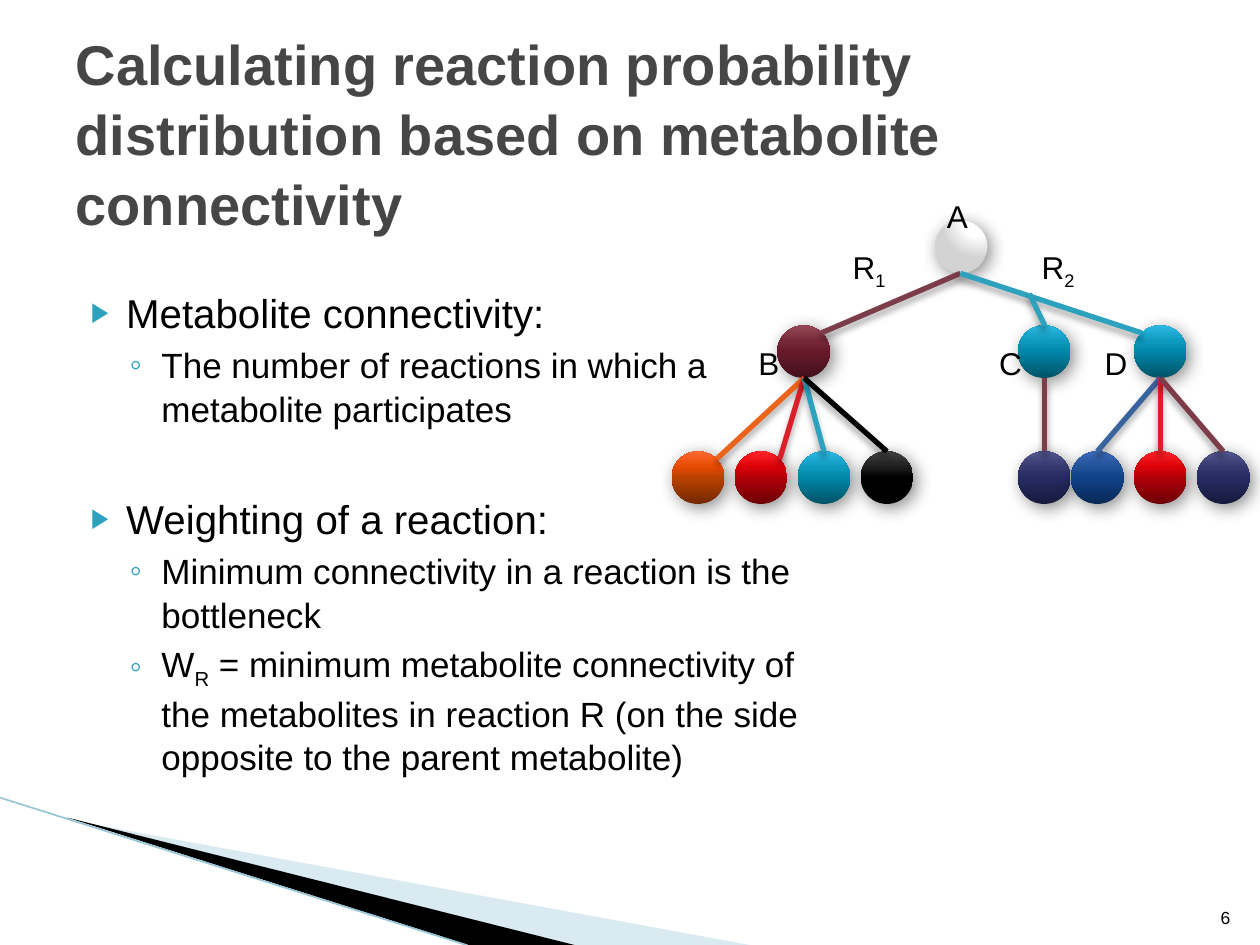
"""Build a slide on reaction probabilities derived from metabolite connectivity."""
import lxml.etree
import pptx
import pptx.dml.color
import pptx.enum.shapes
import pptx.enum.text
import pptx.oxml
import pptx.oxml.ns
import pptx.util

Cm = pptx.util.Cm
Pt = pptx.util.Pt
RGBColor = pptx.dml.color.RGBColor
qn = pptx.oxml.ns.qn
NAMESPACE = pptx.oxml.ns.nsdecls("a")

BLACK = RGBColor(0x00, 0x00, 0x00)
GREY = RGBColor(0x46, 0x46, 0x46)
TEAL = RGBColor(0x2D, 0xA2, 0xBF)
PALE_BLUE = RGBColor(0xA0, 0xCB, 0xDC)
EDGE_BLUE = RGBColor(0x97, 0xC5, 0xD8)
MAROON = RGBColor(0x7D, 0x3C, 0x4A)
ORANGE = RGBColor(0xEB, 0x64, 0x1B)
RED = RGBColor(0xDA, 0x1F, 0x28)
BLUE = RGBColor(0x39, 0x63, 0x9D)

LINEAR = '<a:lin ang="16200000" scaled="0"/>'
RADIAL = '<a:path path="circle"><a:fillToRect l="65000" b="98000"/></a:path>'
STOPS = (0, 50, 70, 100)
WHITE_BALL = ((0, 40, 100), ("FFFFFF", "FFFFFF", "D3D3D3"), RADIAL)
MAROON_BALL = (STOPS, ("420F1A", "681A2B", "772939", "944755"), LINEAR)
TEAL_BALL = (STOPS, ("005367", "0086A7", "0E9ABE", "2CB9E3"), LINEAR)
BLACK_BALL = (STOPS, ("000000", "000000", "1D1D1D", "424242"), LINEAR)
BLUE_BALL = (STOPS, ("072956", "104288", "205199", "3D6BB9"), LINEAR)
RED_BALL = (STOPS, ("6D0005", "B00008", "DA0008", "FF2429"), LINEAR)
NAVY_BALL = (STOPS, ("171A3D", "262B61", "353970", "51568D"), LINEAR)
ORANGE_BALL = (STOPS, ("732800", "B94100", "E64900", "FF6933"), LINEAR)


def add_line(start, end, color, width):
    line = slide.shapes.add_connector(
        pptx.enum.shapes.MSO_CONNECTOR.STRAIGHT,
        *(Cm(value) for value in start + end))
    line.line.color.rgb = color
    line.line.width = Pt(width)
    effects = lxml.etree.SubElement(line._element.spPr, qn("a:effectLst"))
    return effects


def add_shadow(effects, alpha, blur, direction):
    effects.append(pptx.oxml.parse_xml(
        f'<a:outerShdw {NAMESPACE} blurRad="{Pt(blur)}" dist="{Pt(3)}" '
        f'dir="{direction * 60000}" algn="ctr" rotWithShape="0">'
        f'<a:srgbClr val="000000"><a:alpha val="{alpha * 1000}"/></a:srgbClr>'
        '</a:outerShdw>'))


deck = pptx.Presentation()
deck.slide_width = Cm(25.4)
deck.slide_height = Cm(19.05)
slide = deck.slides.add_slide(deck.slide_layouts[1])

wedges = [
    ([(1.4, 16.53), (15.11, 19.05), (11.58, 19.05)], PALE_BLUE),
    ([(1.35, 16.48), (11.58, 19.05), (9.45, 19.05)], BLACK),
]
for points, color in wedges:
    corners = [(Cm(x), Cm(y)) for x, y in points]
    builder = slide.shapes.build_freeform(*corners[0])
    builder.add_line_segments(corners[1:])
    wedge = builder.convert_to_shape()
    wedge.shadow.inherit = False
    wedge.fill.solid()
    wedge.fill.fore_color.rgb = color
    wedge.line.fill.background()
    if color == PALE_BLUE:
        tint = wedge._element.spPr.find(qn("a:solidFill"))[0]
        lxml.etree.SubElement(tint, qn("a:alpha")).set("val", "40000")
add_line((0, 16.08), (9.4, 19.05), EDGE_BLUE, 0.95)

title = slide.shapes.title
title.left, title.top, title.width, title.height = Cm(1.27), Cm(1.07), Cm(22.86), Cm(3.18)
title.text_frame.auto_size = pptx.enum.text.MSO_AUTO_SIZE.NONE
title.text_frame.vertical_anchor = pptx.enum.text.MSO_ANCHOR.MIDDLE
para = title.text_frame.paragraphs[0]
para.text = "Calculating reaction probability distribution based on metabolite connectivity"
para.alignment = pptx.enum.text.PP_ALIGN.LEFT
para.line_spacing = 1.04
para.font.name = "Arial"
para.font.size = Pt(32)
para.font.bold = True
para.font.color.rgb = GREY

body = slide.placeholders[1]
body.left, body.top, body.width, body.height = Cm(1.27), Cm(5.64), Cm(16.08), Cm(11.38)
body.text_frame.auto_size = pptx.enum.text.MSO_AUTO_SIZE.NONE
body.text_frame.vertical_anchor = pptx.enum.text.MSO_ANCHOR.TOP
level_styles = [("▶", 68, 1.02, 0.71, 23), ("◦", 100, 1.73, 0.64, 20)]
items = [
    (0, 0, ["Metabolite connectivity:"]),
    (1, 3.2, ["The number of reactions in which a metabolite participates"]),
    (0, 36, ["Weighting of a reaction:"]),
    (1, 3.2, ["Minimum connectivity in a reaction is the bottleneck"]),
    (1, 3.2, ["W", "R", " = minimum metabolite connectivity of the metabolites in "
              "reaction R (on the side opposite to the parent metabolite)"]),
]
for index, (level, space, texts) in enumerate(items):
    frame = body.text_frame
    para = frame.add_paragraph() if index else frame.paragraphs[0]
    bullet, percent, margin, hanging, size = level_styles[level]
    para.level = level
    properties = para._p.get_or_add_pPr()
    properties.set("marL", str(Cm(margin)))
    properties.set("indent", str(-Cm(hanging)))
    for markup in (f'<a:buClr {NAMESPACE}><a:srgbClr val="{TEAL}"/></a:buClr>',
                   f'<a:buSzPct {NAMESPACE} val="{percent * 1000}"/>',
                   f'<a:buFont {NAMESPACE} typeface="Arial"/>',
                   f'<a:buChar {NAMESPACE} char="{bullet}"/>'):
        properties.append(pptx.oxml.parse_xml(markup))
    para.space_before = Pt(space)
    para.line_spacing = 1.04
    para.font.name = "Arial"
    para.font.size = Pt(size)
    para.font.color.rgb = BLACK
    for position, text in enumerate(texts):
        span = para.add_run()
        span.text = text
        if position == 1:
            span.font._element.set("baseline", "-25000")

BALL_SIZE = 1.06
LEAF_TOP = 9.1
balls = [
    (18.84, 4.45, WHITE_BALL), (15.67, 6.56, MAROON_BALL),
    (20.52, 6.56, TEAL_BALL), (22.86, 6.56, TEAL_BALL), (20.52, LEAF_TOP, NAVY_BALL),
]
leaf_groups = [(13.54, [ORANGE_BALL, RED_BALL, TEAL_BALL, BLACK_BALL]),
               (21.59, [BLUE_BALL, RED_BALL, NAVY_BALL])]
for first_left, styles in leaf_groups:
    balls += [(first_left + 1.27 * i, LEAF_TOP, style) for i, style in enumerate(styles)]
for left, top, (stops, colors, direction) in balls:
    ball = slide.shapes.add_shape(
        pptx.enum.shapes.MSO_SHAPE.OVAL, Cm(left), Cm(top), Cm(BALL_SIZE), Cm(BALL_SIZE))
    ball.fill.background()
    ball.line.fill.background()
    ball.shadow.inherit = False
    shape_properties = ball._element.spPr
    marks = "".join(f'<a:gs pos="{stop * 1000}"><a:srgbClr val="{color}"/></a:gs>'
                    for stop, color in zip(stops, colors))
    shape_properties.replace(shape_properties.find(qn("a:noFill")), pptx.oxml.parse_xml(
        f'<a:gradFill {NAMESPACE}><a:gsLst>{marks}</a:gsLst>{direction}</a:gradFill>'))
    add_shadow(shape_properties.find(qn("a:effectLst")), 45, 10, 45)

branches = [
    ((19.36, 5.51), [(16.56, 6.71, MAROON), (23.01, 6.71, TEAL)]),
    ((20.75, 5.92), [(21.06, 6.56, TEAL)]),
    ((16.21, 7.62), [(14.45, 9.25, ORANGE), (15.72, 9.25, RED),
                     (16.61, LEAF_TOP, TEAL), (17.88, LEAF_TOP, BLACK)]),
    ((23.39, 7.62), [(22.12, LEAF_TOP, BLUE), (23.39, LEAF_TOP, RED),
                     (24.66, LEAF_TOP, MAROON)]),
    ((21.06, 7.62), [(21.06, LEAF_TOP, MAROON)]),
]
for start, ends in branches:
    for x, y, color in ends:
        add_shadow(add_line(start, (x, y), color, 3), 35, 4, 90)

labels = [
    (16.94, 4.88, 1.47, "R", "1", 18), (20.75, 4.88, 1.47, "R", "2", 18),
    (18.84, 3.84, 1.07, "A", "", 18), (15.04, 6.81, 1.07, "B", "", 18),
    (19.89, 6.81, 1.07, "C", "", 18), (22.02, 6.81, 1.07, "D", "", 18),
    (24.03, 17.81, 1.02, "6", "", 10),
]
for left, top, width, text, subscript, size in labels:
    box = slide.shapes.add_textbox(Cm(left), Cm(top), Cm(width), Cm(1.02))
    box.text_frame.word_wrap = True
    para = box.text_frame.paragraphs[0]
    para.text = text
    para.font.name = "Arial"
    para.font.size = Pt(size)
    para.font.color.rgb = BLACK
    if subscript:
        span = para.add_run()
        span.text = subscript
        span.font._element.set("baseline", "-25000")
    if size == 10:
        para.alignment = pptx.enum.text.PP_ALIGN.RIGHT
        box.text_frame.vertical_anchor = pptx.enum.text.MSO_ANCHOR.BOTTOM

deck.save("out.pptx")
